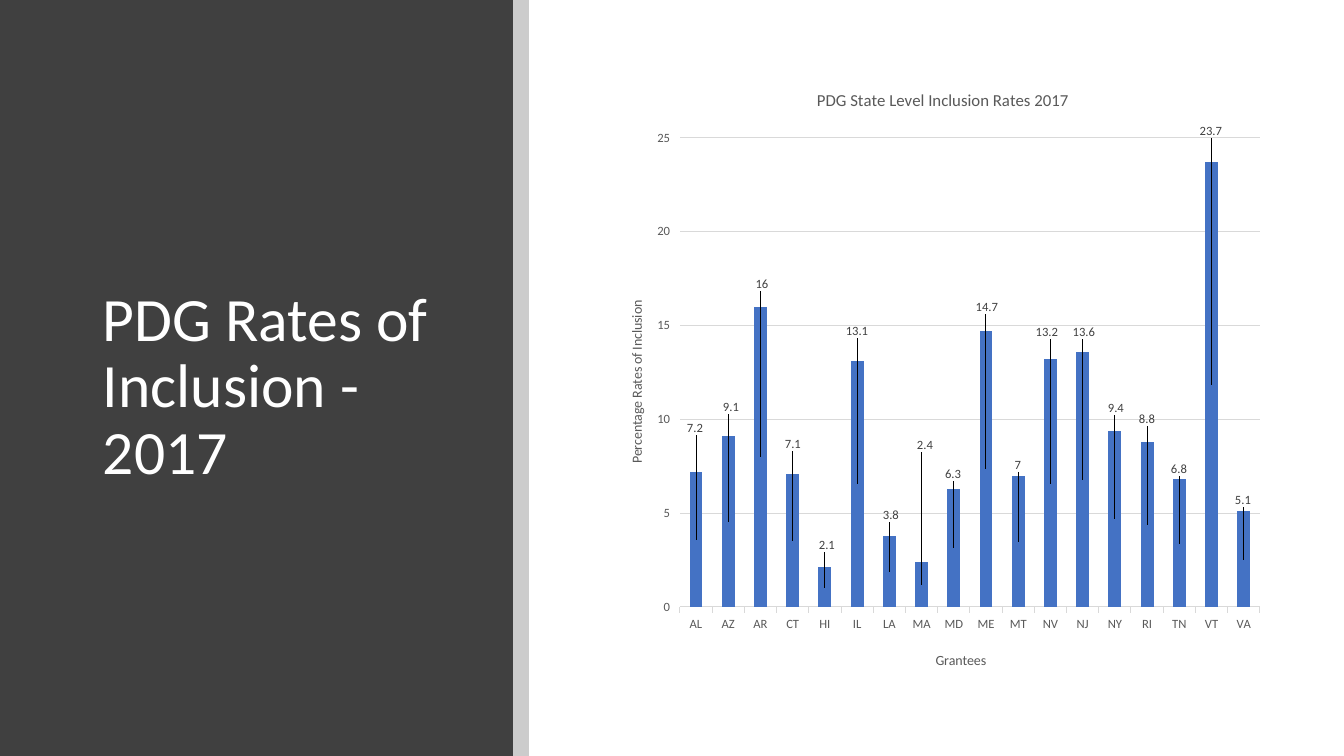
from dataclasses import dataclass

from lxml import etree
from pptx import Presentation
from pptx import util as u
from pptx.chart.data import CategoryChartData
from pptx.dml.color import RGBColor
from pptx.enum import chart as ch, shapes, text
from pptx.oxml.ns import qn

PX = 914400 / 100.8


@dataclass(frozen=True)
class Theme:
    font: str = "Calibri"
    panel: str = "404040"
    stripe: str = "000000"
    heading: str = "FFFFFF"
    bar: str = "4472C4"
    grid: str = "D9D9D9"
    axis_text: str = "595959"
    label_text: str = "404040"
    heading_size: int = 44
    chart_title_size: int = 12
    axis_title_size: int = 10
    tick_size: int = 9


theme = Theme()


def style(font, size, color):
    font.name, font.size, font.bold = theme.font, u.Pt(size), False
    font.color.rgb = RGBColor.from_string(color)


def set_layout(parent, after, **settings):
    """Give a chart part a manual layout, placed after the named child or first."""
    for old in parent.findall(qn("c:layout")):
        parent.remove(old)
    layout = etree.Element(qn("c:layout"))
    manual = etree.SubElement(layout, qn("c:manualLayout"))
    for name, value in settings.items():
        shown = value if isinstance(value, str) else f"{value:.4f}"
        etree.SubElement(manual, qn(f"c:{name}")).set("val", shown)
    if after:
        parent.find(qn(after)).addnext(layout)
    else:
        parent.insert(0, layout)


deck = Presentation()
deck.slide_width, deck.slide_height = round(1344 * PX), round(756 * PX)
page = deck.slides.add_slide(deck.slide_layouts[6])

# Left panel and its translucent edge
for left, width, color, opacity in ((0, 513, theme.panel, 100), (513, 16, theme.stripe, 20)):
    band = page.shapes.add_shape(
        shapes.MSO_SHAPE.RECTANGLE, round(left * PX), 0, round(width * PX), deck.slide_height)
    band.shadow.inherit = False
    band.fill.solid()
    band.fill.fore_color.rgb = RGBColor.from_string(color)
    band.line.fill.background()
    if opacity < 100:
        tint = band.element.spPr.find(f".//{qn('a:srgbClr')}")
        etree.SubElement(tint, qn("a:alpha")).set("val", str(opacity * 1000))

# Heading
box = page.shapes.add_textbox(*(round(n * PX) for n in (93, 90, 368, 596)))
frame = box.text_frame
frame.word_wrap = True
frame.vertical_anchor = text.MSO_ANCHOR.MIDDLE
para = frame.paragraphs[0]
para.text = "PDG Rates of Inclusion - 2017"
para.line_spacing = 0.9
style(para.font, theme.heading_size, theme.heading)

# State, rate, and the centre of its label in px
rates = [
    ("AL", 7.2, 695, 428), ("AZ", 9.1, 731, 407), ("AR", 16, 762, 284),
    ("CT", 7.1, 793, 444), ("HI", 2.1, 827, 545), ("IL", 13.1, 857, 331),
    ("LA", 3.8, 891, 515), ("MA", 2.4, 925, 445), ("MD", 6.3, 953, 474),
    ("ME", 14.7, 987, 307), ("MT", 7, 1018, 465), ("NV", 13.2, 1047, 332),
    ("NJ", 13.6, 1084, 332), ("NY", 9.4, 1116, 408), ("RI", 8.8, 1147, 419),
    ("TN", 6.8, 1179, 469), ("VT", 23.7, 1211, 131), ("VA", 5.1, 1243, 500),
]
data = CategoryChartData()
data.categories = [state for state, *_ in rates]
data.add_series("Series 1", [rate for _, rate, *_ in rates])

chart_left, chart_top, chart_width, chart_height = 602, 71, 671, 614
plot_left, plot_top, plot_width, plot_height = 680, 138, 580, 469
axis_max = 25

chart = page.shapes.add_chart(
    ch.XL_CHART_TYPE.COLUMN_STACKED,
    *(round(n * PX) for n in (chart_left, chart_top, chart_width, chart_height)), data).chart
chart.has_legend = False
style(chart.font, theme.tick_size, theme.axis_text)

states, percent = chart.category_axis, chart.value_axis
states.major_tick_mark = ch.XL_TICK_MARK.OUTSIDE
states.format.line.color.rgb = RGBColor.from_string(theme.grid)
states.format.line.width = u.Pt(0.75)
percent.minimum_scale, percent.maximum_scale, percent.major_unit = 0, axis_max, 5
percent.format.line.fill.background()
percent.has_major_gridlines = True
percent.major_gridlines.format.line.color.rgb = RGBColor.from_string(theme.grid)
percent.major_gridlines.format.line.width = u.Pt(0.75)
for axis in (states, percent):
    style(axis.tick_labels.font, theme.tick_size, theme.axis_text)

for owner, title, wording, size, left, top in (
    (chart, chart.chart_title, "PDG State Level Inclusion Rates 2017",
     theme.chart_title_size, 814, 86),
    (states, states.axis_title, "Grantees", theme.axis_title_size, 933, 649),
    (percent, percent.axis_title, "Percentage Rates of Inclusion",
     theme.axis_title_size, 625, 298),
):
    owner.has_title = True
    para = title.text_frame.paragraphs[0]
    para.text = wording
    style(para.font, size, theme.axis_text)
    set_layout(title.element if hasattr(title, "element") else title._element, "c:tx",
               xMode="edge", yMode="edge",
               x=(left - chart_left) / chart_width, y=(top - chart_top) / chart_height)

plot = chart.plots[0]
plot.gap_width, plot.overlap, plot.vary_by_categories = 150, 100, False
set_layout(chart.element.find(f".//{qn('c:plotArea')}") if hasattr(chart, "element")
           else chart._chartSpace.find(f".//{qn('c:plotArea')}"), None,
           layoutTarget="inner", xMode="edge", yMode="edge",
           x=(plot_left - chart_left) / chart_width, y=(plot_top - chart_top) / chart_height,
           w=plot_width / chart_width, h=plot_height / chart_height)

bars = plot.series[0]
bars.format.fill.solid()
bars.format.fill.fore_color.rgb = RGBColor.from_string(theme.bar)
bars.data_labels.show_value = True
bars.data_labels.position = ch.XL_LABEL_POSITION.CENTER
style(bars.data_labels.font, theme.tick_size, theme.label_text)

# Each label is moved from the middle of its bar
for index, (_, rate, label_x, label_y) in enumerate(rates):
    label = bars.points[index].data_label
    label.position = ch.XL_LABEL_POSITION.CENTER
    style(label.font, theme.tick_size, theme.label_text)
    bar_x = plot_left + plot_width * (index + 0.5) / len(rates)
    bar_y = plot_top + plot_height * (1 - rate / axis_max / 2)
    entry = bars.data_labels._element.findall(qn("c:dLbl"))[index]
    set_layout(entry, "c:idx",
               x=(label_x - bar_x) / chart_width, y=(label_y - bar_y) / chart_height)

deck.save("out.pptx")
